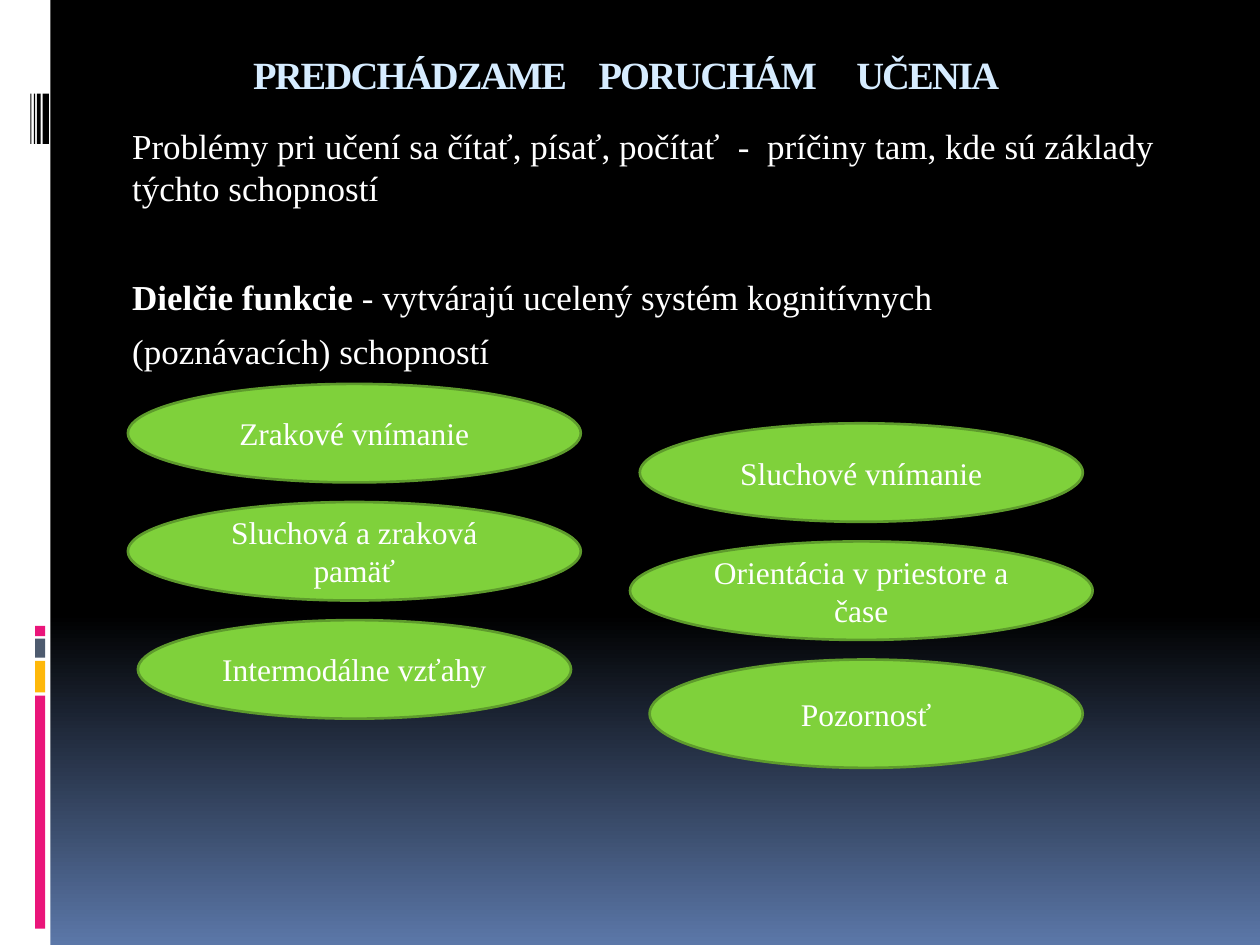
"""Builds a slide on preventing learning disorders."""
from pptx import Presentation, util as u
from pptx.dml.color import RGBColor
from pptx.enum import shapes, text

BLACK = RGBColor(0x00, 0x00, 0x00)
WHITE = RGBColor(0xFF, 0xFF, 0xFF)
BLUE = RGBColor(0x5B, 0x77, 0xA8)
ICE = RGBColor(0xD6, 0xEC, 0xFF)
PINK = RGBColor(0xEA, 0x15, 0x7A)
AMBER = RGBColor(0xFE, 0xB8, 0x0A)
SLATE = RGBColor(0x4E, 0x5B, 0x6F)
GREEN = RGBColor(0x7F, 0xD1, 0x3B)
MOSS = RGBColor(0x5E, 0x9B, 0x2C)


class Deck:
    face = "Times New Roman"

    def __init__(self, wide, high):
        self.show = Presentation()
        self.show.slide_width, self.show.slide_height = u.Pt(wide), u.Pt(high)
        self.slide = self.show.slides.add_slide(self.show.slide_layouts[6])

    def ground(self, start, end, begin):
        fill = self.slide.background.fill
        fill.gradient()
        fill.gradient_angle = 270
        for stop, color, place in zip(fill.gradient_stops, (start, end), (begin, 1)):
            stop.color.rgb, stop.position = color, place

    def shape(self, kind, box, color, edge=None):
        item = self.slide.shapes.add_shape(kind, *map(u.Pt, box))
        item.shadow.inherit = False
        item.fill.solid()
        item.fill.fore_color.rgb = color
        if edge is None:
            item.line.fill.background()
        else:
            item.line.color.rgb, item.line.width = edge, u.Pt(1.5)
        return item

    def bar(self, box, color):
        self.shape(shapes.MSO_SHAPE.RECTANGLE, box, color)

    def oval(self, box, words):
        item = self.shape(shapes.MSO_SHAPE.OVAL, box, GREEN, MOSS)
        item.text_frame.vertical_anchor = text.MSO_ANCHOR.MIDDLE
        par = item.text_frame.paragraphs[0]
        par.alignment = text.PP_ALIGN.CENTER
        self.letter(par, [(words,)], 18)

    def frame(self, box):
        frame = self.slide.shapes.add_textbox(*map(u.Pt, box)).text_frame
        frame.word_wrap = True
        return frame

    def letter(self, par, parts, size, color=WHITE, bold=False):
        font = par.font
        font.name, font.size, font.bold = self.face, u.Pt(size), bold
        font.color.rgb = color
        for words, *gap in parts:
            run = par.add_run()
            run.text = words
            if gap:
                run._r.get_or_add_rPr().set("spc", str(round(gap[0] * 100)))

    def title(self, box, parts):
        frame = self.frame(box)
        frame.vertical_anchor = text.MSO_ANCHOR.MIDDLE
        frame.margin_bottom = u.Pt(9)
        par = frame.paragraphs[0]
        par.alignment = text.PP_ALIGN.CENTER
        self.letter(par, parts, 22, ICE, True)

    def body(self, box, rows):
        frame = self.frame(box)
        for i, (space, parts) in enumerate(rows):
            par = frame.add_paragraph() if i else frame.paragraphs[0]
            par.space_before, par.line_spacing = u.Pt(space), u.Pt(24)
            self.letter(par, parts, 20)
        return frame


def main():
    deck = Deck(720, 540)
    deck.ground(BLACK, BLUE, 0.65)
    deck.bar((0, 0, 28.8, 540), WHITE)
    for top, high, color in ((397.5, 133.2, PINK), (377.6, 18, AMBER),
                             (365, 10.8, SLATE), (357.7, 5.8, PINK)):
        deck.bar((20, top, 5.8, high), color)
    for left, wide in ((24.4, 3.6), (21.1, 2.2), (19.4, 0.7), (17.3, 0.7)):
        deck.bar((left, 53.5, wide, 28.8), BLACK)

    deck.title((33.8, 22.3, 648, 45.4), [
        ("PREDCHÁDZAME", -1), (" ", 12.5), ("PORUCHÁM", -1), (" ", 17), ("UČENIA", -1)])
    frame = deck.body((68.4, 67.7, 615.6, 414.7), [
        (0, [("Problémy pri učení sa čítať, písať, počítať",), (" ", 5), ("-",), (" ", 5),
             ("príčiny tam, kde sú základy týchto schopností",)]),
        (38, [("Dielčie funkcie ",), ("- vytvárajú ucelený systém kognitívnych",)]),
        (7, [("(poznávacích) schopností",)])])
    frame.paragraphs[1].runs[0].font.bold = True

    for left, top, wide, high, words in (
            (73.1, 219.4, 258.8, 56.3, "Zrakové vnímanie"),
            (365.6, 241.9, 253.2, 56.3, "Sluchové vnímanie"),
            (73.1, 286.9, 258.8, 56.3, "Sluchová a zraková pamäť"),
            (360, 309.4, 264.4, 56.3, "Orientácia v priestore a čase"),
            (78.8, 354.4, 247.5, 56.3, "Intermodálne vzťahy"),
            (371.2, 376.9, 247.5, 61.9, "Pozornosť")):
        deck.oval((left, top, wide, high), words)
    deck.show.save("out.pptx")


if __name__ == "__main__":
    main()
